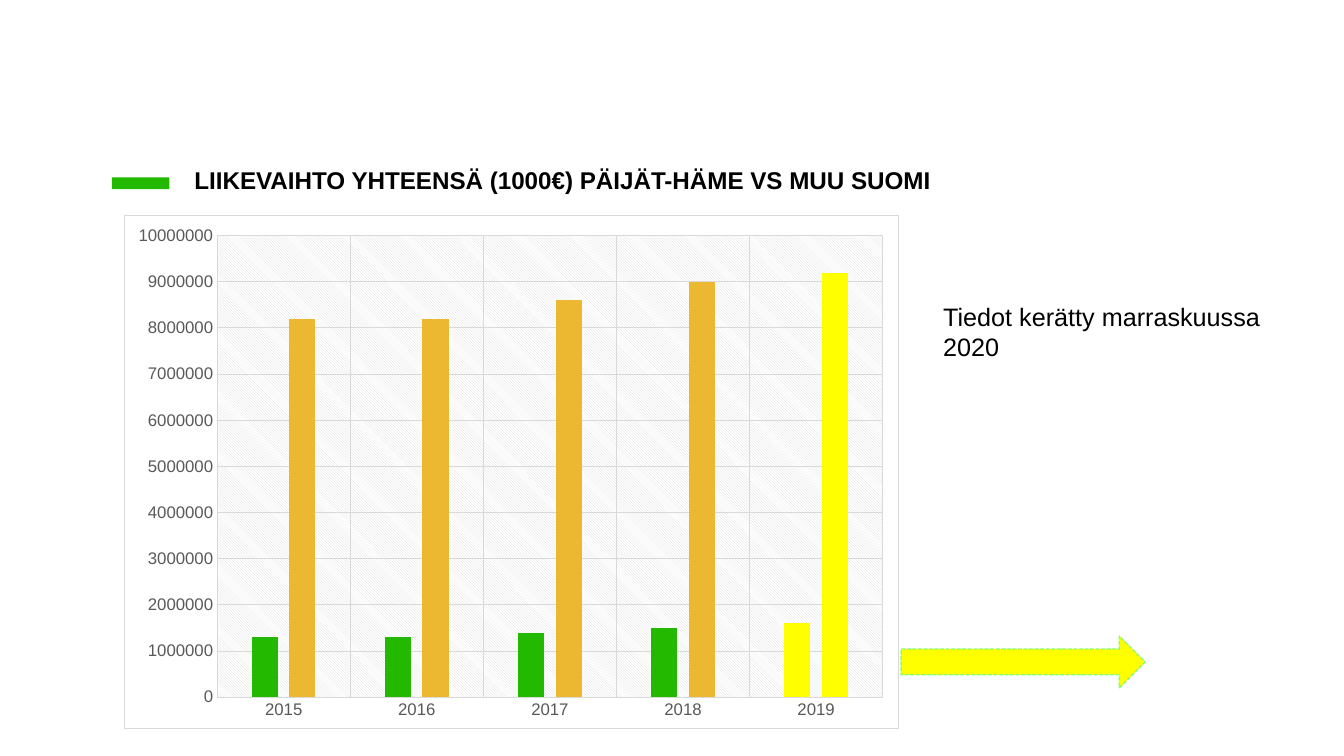
import pptx
import pptx.chart.data
import pptx.dml.color
import pptx.enum.chart
import pptx.enum.dml
import pptx.enum.shapes
import pptx.enum.text
import pptx.oxml
import pptx.oxml.ns
import pptx.util
from pptx.util import Cm, Pt

FONT = "Arial"
GREEN, ORANGE, YELLOW = "23B900", "EDB831", "FFFF00"
GRID, LABEL, BLACK = "D9D9D9", "595959", "000000"
YEARS = ["2015", "2016", "2017", "2018", "2019"]
REVENUE = [
    ("Series 1", GREEN, [1300000, 1300000, 1400000, 1500000, 1600000]),
    ("Series 2", ORANGE, [8200000, 8200000, 8600000, 9000000, 9200000]),
]


def color(value):
    return pptx.dml.color.RGBColor.from_string(value)


def set_fill(item, value):
    item.fill.solid()
    item.fill.fore_color.rgb = color(value)


def set_line(line, value, width=0.75):
    line.color.rgb = color(value)
    line.width = Pt(width)


def set_font(font, size, value, bold=False):
    font.name, font.size, font.bold = FONT, Pt(size), bold
    font.color.rgb = color(value)


def chart_xml(text):
    return pptx.oxml.parse_xml(text.replace(">", " %s>" % pptx.oxml.ns.nsdecls("c", "a"), 1))


def add_shape(slide, kind, left, top, width, height, fill):
    shape = slide.shapes.add_shape(kind, Cm(left), Cm(top), Cm(width), Cm(height))
    shape.shadow.inherit = False
    set_fill(shape, fill)
    shape.line.fill.background()
    return shape


def add_text(slide, left, top, width, height, text, size, bold=False):
    box = slide.shapes.add_textbox(Cm(left), Cm(top), Cm(width), Cm(height))
    box.text_frame.word_wrap = True
    paragraph = box.text_frame.paragraphs[0]
    paragraph.text = text
    set_font(paragraph.font, size, BLACK, bold)
    return box.text_frame


def add_heading(slide, left, top, width):
    # Green marker followed by the title
    add_shape(slide, pptx.enum.shapes.MSO_SHAPE.RECTANGLE, left, top + 0.1, 1.45, 0.3, GREEN)
    frame = add_text(slide, left + 1.83, top, width - 1.83, 1.3,
                     "LIIKEVAIHTO YHTEENSÄ (1000€) PÄIJÄT-HÄME VS MUU SUOMI", 17.3, True)
    frame.vertical_anchor = pptx.enum.text.MSO_ANCHOR.BOTTOM
    frame.margin_bottom = Cm(0.8)
    frame.paragraphs[0].line_spacing = 0.7


def style_axis(axis):
    axis.has_major_gridlines = True
    set_line(axis.major_gridlines.format.line, GRID)
    axis.major_tick_mark = axis.minor_tick_mark = pptx.enum.chart.XL_TICK_MARK.NONE
    set_font(axis.tick_labels.font, 12, LABEL)


def style_areas(chart):
    # Bordered chart area, hatched plot area and its fixed place
    chart_element = chart.element.find(pptx.oxml.ns.qn("c:chart"))
    chart_element.addnext(chart_xml(
        '<c:spPr><a:solidFill><a:srgbClr val="FFFFFF"/></a:solidFill>'
        f'<a:ln w="9525"><a:solidFill><a:srgbClr val="{GRID}"/></a:solidFill></a:ln></c:spPr>'))
    plot_area = chart_element.find(pptx.oxml.ns.qn("c:plotArea"))
    plot_area.append(chart_xml(
        f'<c:spPr><a:pattFill prst="ltDnDiag"><a:fgClr><a:srgbClr val="{GRID}"/></a:fgClr>'
        '<a:bgClr><a:srgbClr val="FFFFFF"/></a:bgClr></a:pattFill>'
        '<a:ln><a:noFill/></a:ln></c:spPr>'))
    for layout in plot_area.findall(pptx.oxml.ns.qn("c:layout")):
        plot_area.remove(layout)
    plot_area.insert(0, chart_xml(
        '<c:layout><c:manualLayout><c:layoutTarget val="inner"/>'
        '<c:xMode val="edge"/><c:yMode val="edge"/><c:x val="0.12"/><c:y val="0.04"/>'
        '<c:w val="0.86"/><c:h val="0.9"/></c:manualLayout></c:layout>'))


def add_revenue_chart(slide, left, top, width, height):
    data = pptx.chart.data.CategoryChartData()
    data.categories = YEARS
    for name, _, values in REVENUE:
        data.add_series(name, values)
    chart = slide.shapes.add_chart(
        pptx.enum.chart.XL_CHART_TYPE.COLUMN_CLUSTERED,
        Cm(left), Cm(top), Cm(width), Cm(height), data).chart
    chart.has_title = chart.has_legend = False
    set_font(chart.font, 10, LABEL)

    # Columns, with the last year highlighted
    plot = chart.plots[0]
    plot.vary_by_categories = False
    plot.gap_width, plot.overlap = 267, -43
    for series, (_, fill, values) in zip(plot.series, REVENUE):
        series.invert_if_negative = False
        set_fill(series.format, fill)
        set_fill(series.points[len(values) - 1].format, YELLOW)

    # Axes
    style_axis(chart.category_axis)
    style_axis(chart.value_axis)
    set_line(chart.category_axis.format.line, GRID)
    chart.value_axis.format.line.fill.background()
    chart.value_axis.minimum_scale = 0
    chart.value_axis.maximum_scale = 10000000
    chart.value_axis.major_unit = 1000000
    style_areas(chart)


def add_side_notes(slide, left, top):
    # Collection date, and the arrow beside the last year
    add_text(slide, left + 0.81, top, 8.92, 1.8, "Tiedot kerätty marraskuussa 2020", 18)
    arrow = add_shape(slide, pptx.enum.shapes.MSO_SHAPE.RIGHT_ARROW,
                      left, top + 8.56, 6.15, 1.3, YELLOW)
    set_line(arrow.line, "88FF6D", 1)
    arrow.line.dash_style = pptx.enum.dml.MSO_LINE.SQUARE_DOT


def main():
    presentation = pptx.Presentation()
    presentation.slide_width, presentation.slide_height = Cm(33.87), Cm(19.05)
    slide = presentation.slides.add_slide(presentation.slide_layouts[6])
    add_heading(slide, 2.82, 4.37, 31.04)
    add_revenue_chart(slide, 3.12, 5.41, 19.53, 12.95)
    add_side_notes(slide, 22.71, 7.47)
    presentation.save("out.pptx")


if __name__ == "__main__":
    main()
